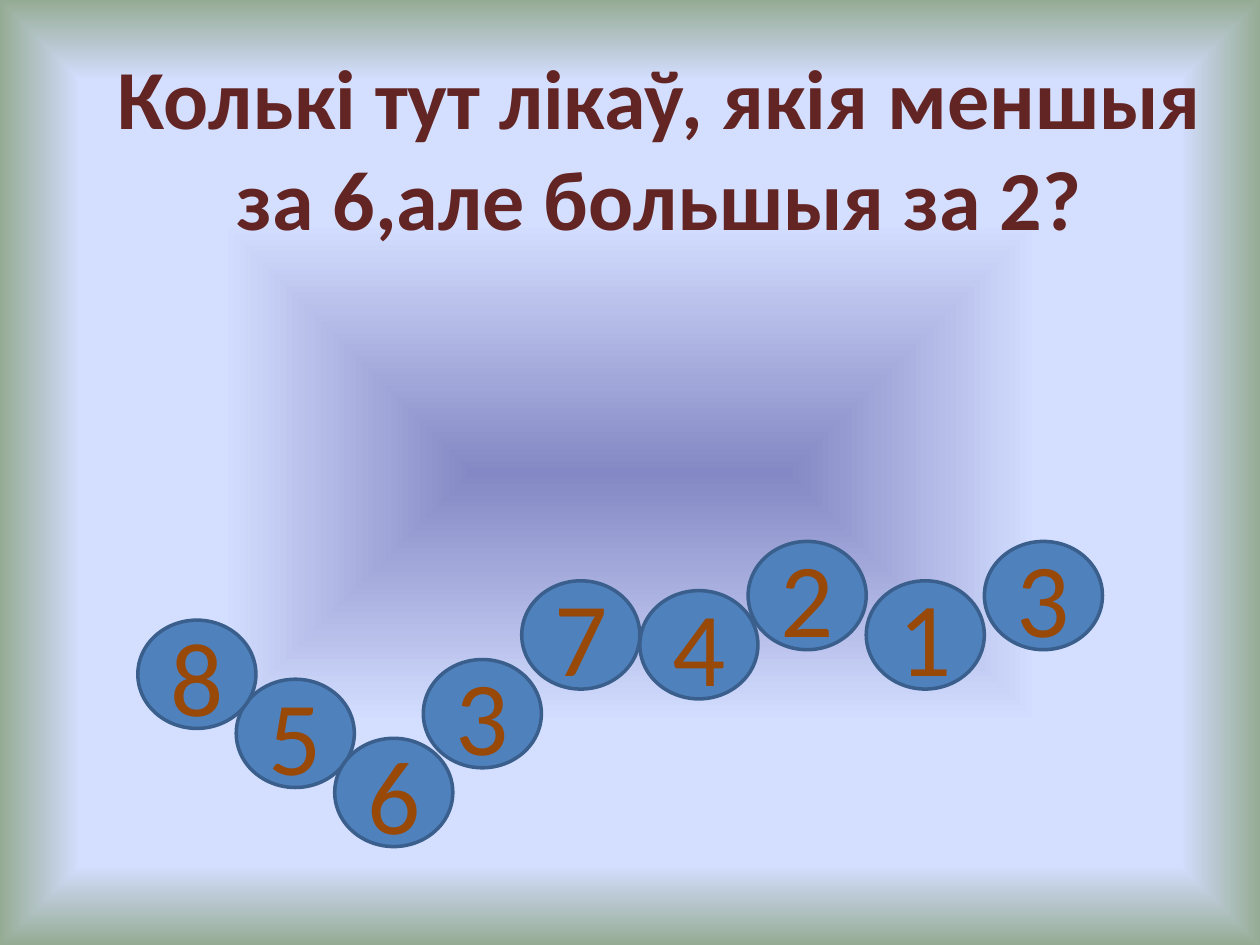
"""Build a counting-puzzle slide with numbered balls on a grid of 128 columns by 96 rows."""
from typing import NamedTuple

from pptx import Presentation
from pptx.dml.color import RGBColor
from pptx.enum.shapes import MSO_SHAPE
from pptx.enum.text import MSO_ANCHOR, MSO_AUTO_SIZE, PP_ALIGN
from pptx.oxml import parse_xml
from pptx.oxml.ns import nsdecls
from pptx.util import Inches, Pt

OVAL = MSO_SHAPE.OVAL
TOP, MIDDLE = MSO_ANCHOR.TOP, MSO_ANCHOR.MIDDLE
CENTER = PP_ALIGN.CENTER
NO_AUTOFIT = MSO_AUTO_SIZE.NONE

SLIDE_WIDTH, SLIDE_HEIGHT = Inches(10), Inches(7.5)
CELL = SLIDE_WIDTH // 128
BALL_COLUMNS, BALL_ROWS = 12, 11
TITLE_ONLY_LAYOUT = 5
FONT = "Calibri"
QUESTION = "Колькі тут лікаў, якія меншыя за 6,але большыя за 2?"

VIOLET = RGBColor(0x84, 0x88, 0xC4)
PALE_BLUE = RGBColor(0xD4, 0xDE, 0xFF)
SAGE = RGBColor(0x96, 0xAB, 0x94)
MAROON = RGBColor(0x63, 0x25, 0x23)
BALL_BLUE = RGBColor(0x4F, 0x81, 0xBD)
BALL_OUTLINE = RGBColor(0x3A, 0x5F, 0x8C)
BROWN = RGBColor(0x98, 0x48, 0x07)
GRADIENT = ((0, VIOLET), (53, PALE_BLUE), (83, PALE_BLUE), (100, SAGE))


class Ball(NamedTuple):
    """A number and the grid cell of its ball's top left corner."""

    number: int
    column: int
    row: int


BALLS = (
    Ball(4, 65, 60),
    Ball(5, 24, 69),
    Ball(1, 88, 59),
    Ball(2, 76, 55),
    Ball(3, 100, 55),
    Ball(6, 34, 75),
    Ball(3, 43, 67),
    Ball(7, 53, 59),
    Ball(8, 14, 63),
)


def paint_background(slide) -> None:
    """Fill the background with a gradient that spreads from the centre."""
    fill = slide.background.fill
    fill.gradient()
    linear = slide.background.element.xpath(".//a:gradFill")[0]
    stops = "".join(
        f'<a:gs pos="{percent * 1000}"><a:srgbClr val="{color}"/></a:gs>'
        for percent, color in GRADIENT
    )
    centred = parse_xml(
        f'<a:gradFill {nsdecls("a")} rotWithShape="1"><a:gsLst>{stops}</a:gsLst>'
        '<a:path path="shape"><a:fillToRect l="50000" t="50000" r="50000" b="50000"/>'
        "</a:path></a:gradFill>"
    )
    linear.getparent().replace(linear, centred)


def write_text(shape, text: str, size: int, color: RGBColor, bold: bool, anchor) -> None:
    """Put one centred, formatted paragraph into a shape."""
    text_frame = shape.text_frame
    text_frame.text = text
    text_frame.word_wrap = True
    text_frame.auto_size = NO_AUTOFIT
    text_frame.vertical_anchor = anchor
    paragraph = text_frame.paragraphs[0]
    paragraph.alignment = CENTER
    font = paragraph.runs[0].font
    font.name, font.size, font.bold = FONT, Pt(size), bold
    font.color.rgb = color


def add_question(slide) -> None:
    """Place the question in the title placeholder."""
    title = slide.shapes.title
    title.left, title.top = 6 * CELL, 4 * CELL
    title.width, title.height = SLIDE_WIDTH - title.left, Inches(2.39)
    write_text(title, QUESTION, 48, MAROON, True, TOP)


def add_ball(slide, ball: Ball) -> None:
    """Draw one numbered ball."""
    shape = slide.shapes.add_shape(
        OVAL, ball.column * CELL, ball.row * CELL, BALL_COLUMNS * CELL, BALL_ROWS * CELL
    )
    shape.shadow.inherit = False
    shape.fill.solid()
    shape.fill.fore_color.rgb = BALL_BLUE
    shape.line.color.rgb = BALL_OUTLINE
    shape.line.width = Pt(2)
    write_text(shape, str(ball.number), 60, BROWN, False, MIDDLE)


def main() -> None:
    """Build and save the presentation."""
    presentation = Presentation()
    presentation.slide_width, presentation.slide_height = SLIDE_WIDTH, SLIDE_HEIGHT
    slide = presentation.slides.add_slide(presentation.slide_layouts[TITLE_ONLY_LAYOUT])
    paint_background(slide)
    add_question(slide)
    for ball in BALLS:
        add_ball(slide, ball)
    presentation.save("out.pptx")


if __name__ == "__main__":
    main()
